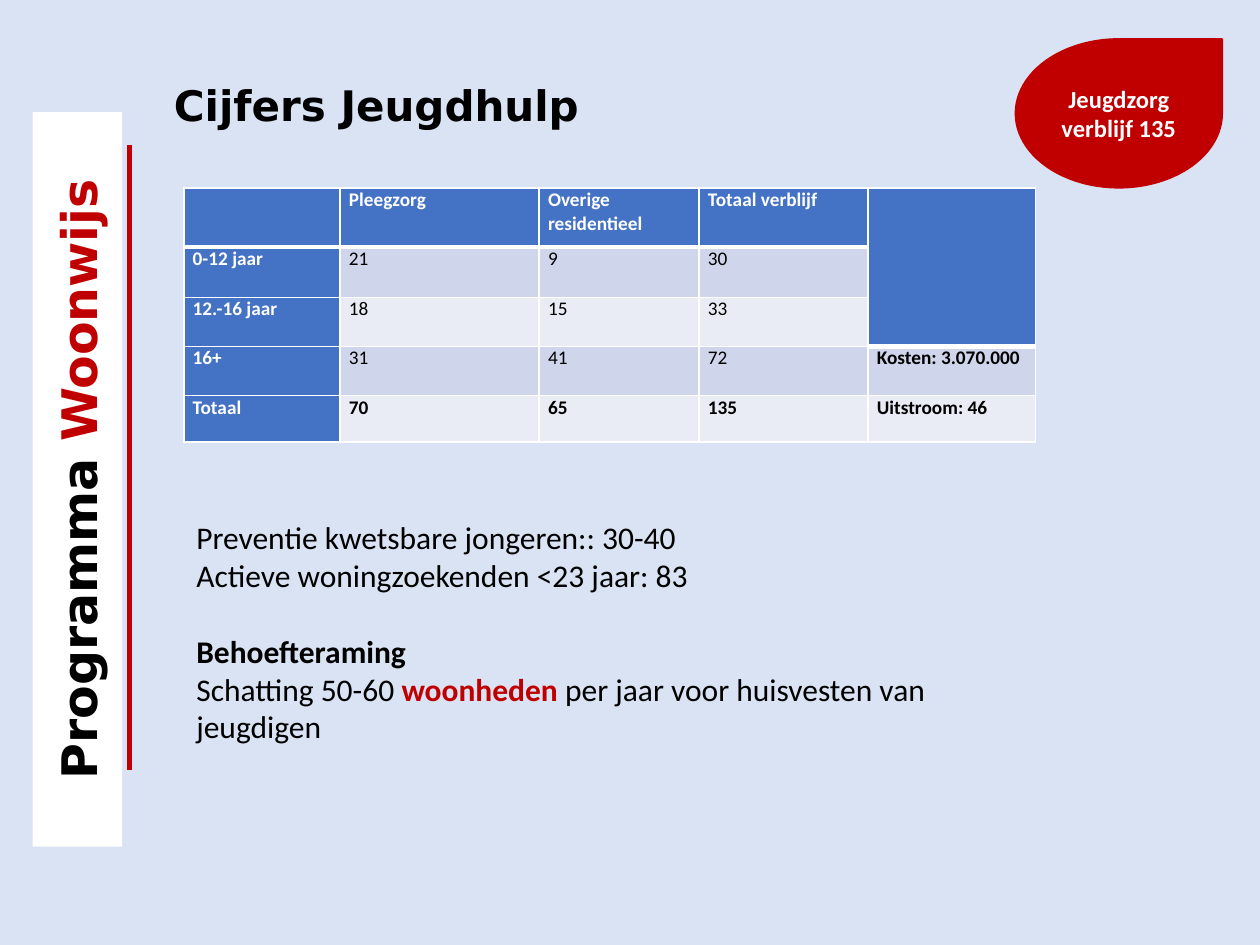
from lxml import etree
from pptx import Presentation
from pptx.dml.color import RGBColor
from pptx.enum.shapes import MSO_CONNECTOR, MSO_SHAPE
from pptx.enum.text import MSO_ANCHOR, MSO_AUTO_SIZE, PP_ALIGN
from pptx.oxml.ns import qn
from pptx.util import Inches, Pt

RECTANGLE, TEARDROP = MSO_SHAPE.RECTANGLE, MSO_SHAPE.TEAR
STRAIGHT = MSO_CONNECTOR.STRAIGHT
TOP, MIDDLE = MSO_ANCHOR.TOP, MSO_ANCHOR.MIDDLE
LEFT, CENTER = PP_ALIGN.LEFT, PP_ALIGN.CENTER
FIT_SHAPE = MSO_AUTO_SIZE.SHAPE_TO_FIT_TEXT

BACKGROUND = RGBColor(0xDA, 0xE3, 0xF3)
RED = RGBColor(0xC0, 0x00, 0x00)
BLUE = RGBColor(0x44, 0x72, 0xC4)
BANDS = (RGBColor(0xCF, 0xD5, 0xEA), RGBColor(0xE9, 0xEB, 0xF5))
WHITE = RGBColor(0xFF, 0xFF, 0xFF)
BLACK = RGBColor(0x00, 0x00, 0x00)
HEADING_FONT, BODY_FONT = "DejaVu Sans", "Calibri"

COLUMN_WIDTHS = (1.24, 1.58, 1.27, 1.34, 1.33)
ROW_HEIGHTS = (0.47, 0.4, 0.39, 0.39, 0.37)
FIGURES = (
    ("", "Pleegzorg", "Overige residentieel", "Totaal verblijf", ""),
    ("0-12 jaar", "21", "9", "30", ""),
    ("12.-16 jaar", "18", "15", "33", ""),
    ("16+", "31", "41", "72", "Kosten: 3.070.000"),
    ("Totaal", "70", "65", "135", "Uitstroom: 46"),
)


def add_span(para, text, size=18, font=BODY_FONT, color=BLACK, bold=False):
    """Append formatted text to a paragraph."""
    span = para.add_run()
    span.text = text
    span.font.size = Pt(size)
    span.font.name = font
    span.font.color.rgb = color
    span.font.bold = bold


def add_panel(page, preset, box, fill):
    """Add a filled shape and return it with its centred paragraph."""
    panel = page.shapes.add_shape(preset, *map(Inches, box))
    panel.shadow.inherit = False
    panel.fill.solid()
    panel.fill.fore_color.rgb = fill
    frame = panel.text_frame
    frame.word_wrap = True
    frame.vertical_anchor = MIDDLE
    para = frame.paragraphs[0]
    para.alignment = CENTER
    return panel, para


def add_sidebar(page, box):
    """Place the upright programme name and the red rule beside it."""
    left, top, width, height = box
    center_x, center_y = left + width / 2, top + height / 2
    turned = (center_x - height / 2, center_y - width / 2, height, width)
    banner, para = add_panel(page, RECTANGLE, turned, WHITE)
    banner.rotation = 270
    banner.line.fill.background()
    add_span(para, "Programma ", size=28, font=HEADING_FONT, bold=True)
    add_span(para, "Woonwijs", size=28, font=HEADING_FONT, color=RED, bold=True)

    rule_x = Inches(left + width + 0.06)
    rule = page.shapes.add_connector(STRAIGHT, rule_x, Inches(1.15), rule_x, Inches(6.11))
    rule.line.color.rgb = RED
    rule.line.width = Pt(3)
    etree.SubElement(rule.element.spPr, qn("a:effectLst"))


def add_title(page, box):
    """Move and format the title placeholder."""
    title = page.shapes.title
    title.left, title.top, title.width, title.height = map(Inches, box)
    frame = title.text_frame
    frame.word_wrap = True
    frame.auto_size = FIT_SHAPE
    frame.vertical_anchor = TOP
    para = frame.paragraphs[0]
    para.alignment = LEFT
    add_span(para, "Cijfers Jeugdhulp", size=24, font=HEADING_FONT, bold=True)


def add_badge(page, box):
    """Place the red teardrop with the total."""
    badge, para = add_panel(page, TEARDROP, box, RED)
    badge.line.color.rgb = RED
    badge.line.width = Pt(1)
    add_span(para, "Jeugdzorg verblijf 135", size=14, color=WHITE, bold=True)


def add_notes_text(page, box):
    """Place the conclusions below the table."""
    frame = page.shapes.add_textbox(*map(Inches, box)).text_frame
    frame.word_wrap = True
    add_span(frame.paragraphs[0], "Preventie kwetsbare jongeren:: 30-40")
    add_span(frame.add_paragraph(), "Actieve woningzoekenden <23 jaar: 83")
    heading = frame.add_paragraph()
    heading.space_before = Pt(22)
    add_span(heading, "Behoefteraming", bold=True)
    estimate = frame.add_paragraph()
    add_span(estimate, "Schatting 50-60 ")
    add_span(estimate, "woonheden ", color=RED, bold=True)
    add_span(estimate, "per jaar voor huisvesten van jeugdigen")


def set_borders(cell, bottom):
    """Draw white cell borders with the given bottom width in points."""
    properties = cell._tc.get_or_add_tcPr()
    widths = {"lnL": 1, "lnR": 1, "lnT": 1, "lnB": bottom}
    for index, (side, width) in enumerate(widths.items()):
        line = etree.Element(qn(f"a:{side}"), w=str(Pt(width)))
        fill = etree.SubElement(line, qn("a:solidFill"))
        etree.SubElement(fill, qn("a:srgbClr"), val=str(WHITE))
        properties.insert(index, line)


def add_figures_table(page, box):
    """Place the table of youth care figures."""
    rows, columns = len(ROW_HEIGHTS), len(COLUMN_WIDTHS)
    table = page.shapes.add_table(rows, columns, *map(Inches, box)).table
    for column, width in zip(table.columns, COLUMN_WIDTHS):
        column.width = Inches(width)
    for row, height in zip(table.rows, ROW_HEIGHTS):
        row.height = Inches(height)
    last_row, last_column = rows - 1, columns - 1
    table.cell(0, last_column).merge(table.cell(2, last_column))

    for i, texts in enumerate(FIGURES):
        for j, text in enumerate(texts):
            cell = table.cell(i, j)
            is_header = i == 0 or j == 0
            cell.fill.solid()
            cell.fill.fore_color.rgb = BLUE if is_header else BANDS[(i - 1) % 2]
            cell.margin_left = cell.margin_right = Inches(0.07)
            cell.margin_top = cell.margin_bottom = 0
            set_borders(cell, bottom=3 if i == 0 else 1)
            if text:
                add_span(
                    cell.text_frame.paragraphs[0],
                    text,
                    size=11,
                    color=WHITE if is_header else BLACK,
                    bold=is_header or i == last_row or j == last_column,
                )


def main():
    """Build the slide and save the deck."""
    deck = Presentation()
    deck.slide_width, deck.slide_height = Inches(10), Inches(7.5)
    page = deck.slides.add_slide(deck.slide_layouts.get_by_name("Title Only"))
    page.background.fill.solid()
    page.background.fill.fore_color.rgb = BACKGROUND
    add_sidebar(page, (0.26, 0.89, 0.71, 5.83))
    add_title(page, (1.28, 0.58, 6.47, 0.5))
    add_notes_text(page, (1.46, 4.06, 6.48, 2.22))
    add_badge(page, (8.06, 0.31, 1.64, 1.18))
    add_figures_table(page, (1.46, 1.49, sum(COLUMN_WIDTHS), sum(ROW_HEIGHTS)))
    deck.save("out.pptx")


if __name__ == "__main__":
    main()
